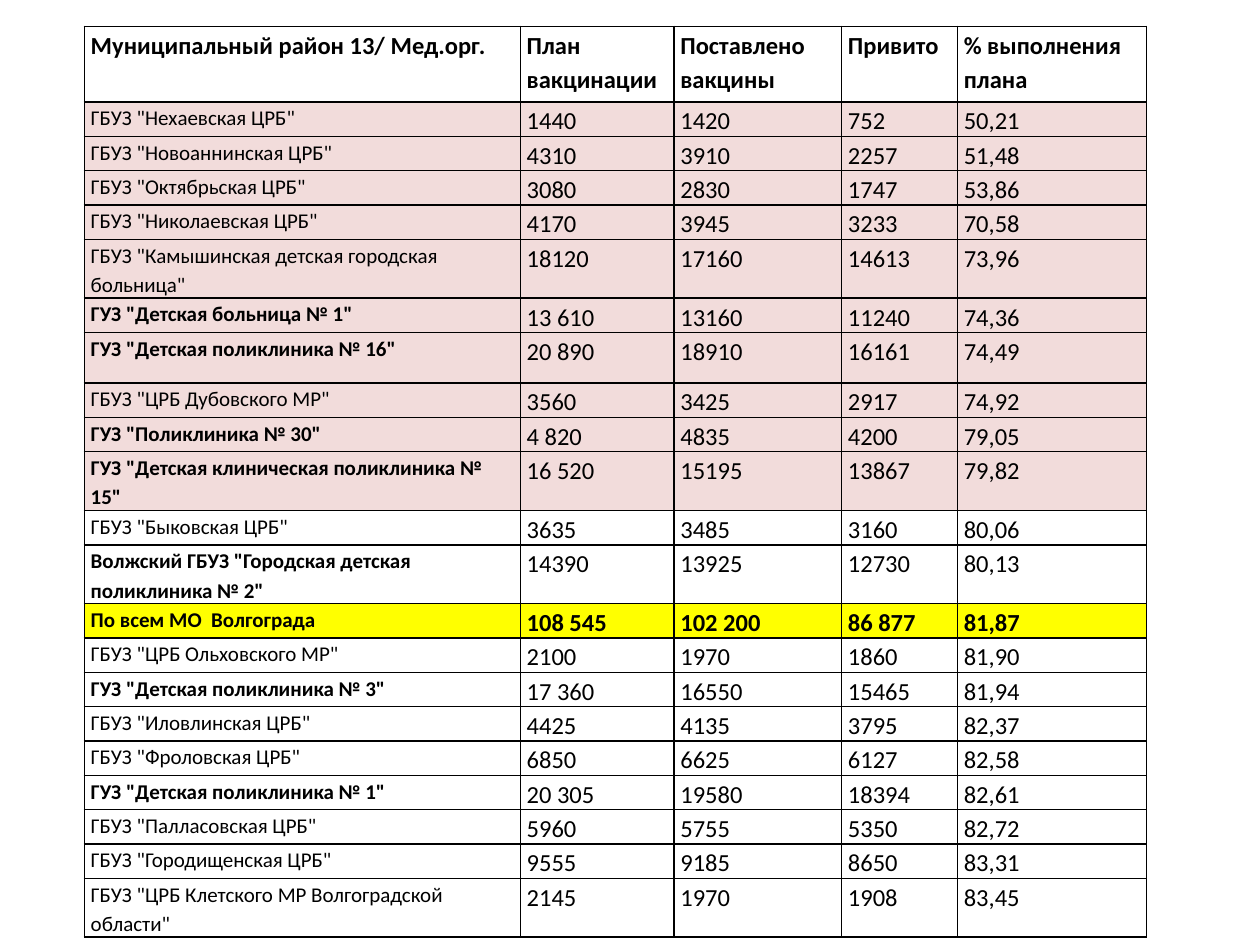
from dataclasses import dataclass

from lxml.etree import SubElement
from pptx import Presentation
from pptx.dml.color import RGBColor as Rgb
from pptx.oxml.ns import qn
from pptx.util import Inches, Pt

COLORS = {"ink": "000000", "below_80": "F2DCDB", "total": "FFFF00"}
FONT = "Calibri"
COLUMN_WIDTHS = (3.46, 1.22, 1.33, 0.92, 1.5)
HEADER_HEIGHT, SINGLE, DOUBLE = 0.6, 0.2, 0.4
HEADINGS = (
    "Муниципальный район 13/ Мед.орг.",
    "План вакцинации",
    "Поставлено вакцины",
    "Привито",
    "% выполнения плана",
)


@dataclass(frozen=True)
class Clinic:
    name: str
    plan: str
    supplied: str
    vaccinated: str
    percent: str
    bold_name: bool = False
    height: float = SINGLE
    is_total: bool = False

    @property
    def values(self) -> tuple[str, ...]:
        return self.name, self.plan, self.supplied, self.vaccinated, self.percent

    @property
    def fill(self) -> str | None:
        if self.is_total:
            return "total"
        return "below_80" if float(self.percent.replace(",", ".")) < 80 else None


CLINICS = (
    Clinic('ГБУЗ "Нехаевская ЦРБ"', "1440", "1420", "752", "50,21"),
    Clinic('ГБУЗ "Новоаннинская ЦРБ"', "4310", "3910", "2257", "51,48"),
    Clinic('ГБУЗ "Октябрьская ЦРБ"', "3080", "2830", "1747", "53,86"),
    Clinic('ГБУЗ "Николаевская ЦРБ"', "4170", "3945", "3233", "70,58"),
    Clinic('ГБУЗ "Камышинская детская городская больница"',
           "18120", "17160", "14613", "73,96", height=DOUBLE),
    Clinic('ГУЗ "Детская больница № 1"', "13 610", "13160", "11240", "74,36", bold_name=True),
    Clinic('ГУЗ "Детская поликлиника № 16"',
           "20 890", "18910", "16161", "74,49", bold_name=True, height=DOUBLE),
    Clinic('ГБУЗ "ЦРБ Дубовского МР"', "3560", "3425", "2917", "74,92"),
    Clinic('ГУЗ "Поликлиника № 30"', "4 820", "4835", "4200", "79,05", bold_name=True),
    Clinic('ГУЗ "Детская клиническая поликлиника № 15"',
           "16 520", "15195", "13867", "79,82", bold_name=True, height=DOUBLE),
    Clinic('ГБУЗ "Быковская ЦРБ"', "3635", "3485", "3160", "80,06"),
    Clinic('Волжский ГБУЗ "Городская детская поликлиника № 2"',
           "14390", "13925", "12730", "80,13", bold_name=True, height=DOUBLE),
    Clinic("По всем МО  Волгограда",
           "108 545", "102 200", "86 877", "81,87", bold_name=True, is_total=True),
    Clinic('ГБУЗ "ЦРБ Ольховского МР"', "2100", "1970", "1860", "81,90"),
    Clinic('ГУЗ "Детская поликлиника № 3"', "17 360", "16550", "15465", "81,94", bold_name=True),
    Clinic('ГБУЗ "Иловлинская ЦРБ"', "4425", "4135", "3795", "82,37"),
    Clinic('ГБУЗ "Фроловская ЦРБ"', "6850", "6625", "6127", "82,58"),
    Clinic('ГУЗ "Детская поликлиника № 1"', "20 305", "19580", "18394", "82,61", bold_name=True),
    Clinic('ГБУЗ "Палласовская ЦРБ"', "5960", "5755", "5350", "82,72"),
    Clinic('ГБУЗ "Городищенская ЦРБ"', "9555", "9185", "8650", "83,31"),
    Clinic('ГБУЗ "ЦРБ Клетского МР Волгоградской области"',
           "2145", "1970", "1908", "83,45", height=DOUBLE),
)


def add_borders(cell) -> None:
    properties = cell._tc.get_or_add_tcPr()
    for side in ("lnL", "lnR", "lnT", "lnB"):
        border = SubElement(properties, qn(f"a:{side}"), w=str(Pt(1)))
        solid = SubElement(border, qn("a:solidFill"))
        SubElement(solid, qn("a:srgbClr"), val=COLORS["ink"])


def write_cell(cell, text: str, size: int, bold: bool, fill: str | None) -> None:
    cell.margin_left = cell.margin_right = Inches(0.05)
    cell.margin_top = cell.margin_bottom = 0
    add_borders(cell)
    if fill:
        cell.fill.solid()
        cell.fill.fore_color.rgb = Rgb.from_string(COLORS[fill])
    else:
        cell.fill.background()
    paragraph = cell.text_frame.paragraphs[0]
    paragraph.text = text
    paragraph.line_spacing = 1.15
    font = paragraph.runs[0].font
    font.name, font.size, font.bold = FONT, Pt(size), bold
    font.color.rgb = Rgb.from_string(COLORS["ink"])


def write_clinic(table, row: int, clinic: Clinic) -> None:
    table.rows[row].height = Inches(clinic.height)
    for column, text in enumerate(clinic.values):
        is_name = column == 0
        bold = clinic.is_total or (is_name and clinic.bold_name)
        write_cell(table.cell(row, column), text, 12 if is_name else 14, bold, clinic.fill)


def main() -> None:
    deck = Presentation()
    deck.slide_width, deck.slide_height = Inches(10), Inches(7.5)
    slide = deck.slides.add_slide(deck.slide_layouts[6])
    frame = slide.shapes.add_table(
        len(CLINICS) + 1, len(HEADINGS),
        Inches(0.67), Inches(0.21), Inches(sum(COLUMN_WIDTHS)), Inches(7.13),
    )
    table = frame.table
    table.horz_banding = False
    for column, (heading, width) in enumerate(zip(HEADINGS, COLUMN_WIDTHS)):
        table.columns[column].width = Inches(width)
        write_cell(table.cell(0, column), heading, 14, True, None)
    table.rows[0].height = Inches(HEADER_HEIGHT)
    for row, clinic in enumerate(CLINICS, start=1):
        write_clinic(table, row, clinic)
    frame.height = Inches(7.13)
    deck.save("out.pptx")


if __name__ == "__main__":
    main()
